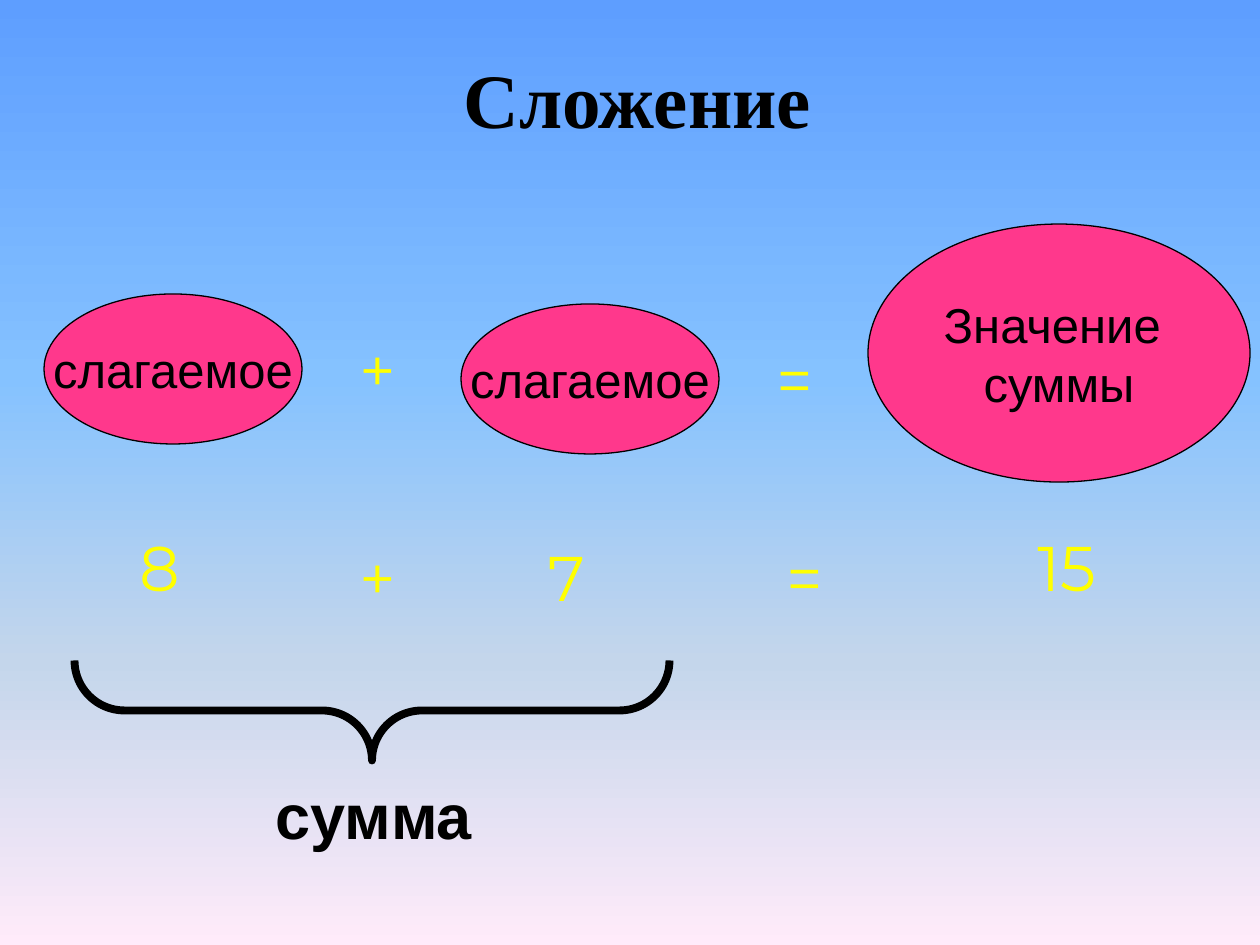
from lxml import etree
from pptx import Presentation
from pptx.dml.color import RGBColor
from pptx.enum.shapes import MSO_SHAPE
from pptx.enum.text import MSO_ANCHOR, PP_ALIGN
from pptx.oxml.ns import qn
from pptx.util import Emu, Pt

OVAL, BRACE = MSO_SHAPE.OVAL, MSO_SHAPE.RIGHT_BRACE
TOP, MIDDLE = MSO_ANCHOR.TOP, MSO_ANCHOR.MIDDLE
LEFT, CENTER = PP_ALIGN.LEFT, PP_ALIGN.CENTER

THEME = {
    "ink": "000000",
    "oval": "FF388C",
    "formula": "FFFF00",
    "sky": [(0, "5E9EFF"), (40, "85C2FF"), (70, "C4D6EB"), (100, "FFEBFA")],
    "title": ("Times New Roman", 44),
    "term": ("Arial", 28),
    "number": ("Montserrat", 36),
    "sum": ("Arial", 36),
}
INK = RGBColor.from_string(THEME["ink"])


def px(*lengths):
    return [Emu(round(length * 914400 / 126)) for length in lengths]


def write(frame, lines, role, color, align, anchor, bold=False, wrap=False):
    frame.word_wrap = wrap
    frame.vertical_anchor = anchor
    runs = []
    for index, line in enumerate(lines):
        paragraph = frame.paragraphs[0] if index == 0 else frame.add_paragraph()
        paragraph.alignment = align
        run = paragraph.add_run()
        run.text = line
        run.font.name, size = THEME[role]
        run.font.size = Pt(size)
        run.font.bold = bold
        run.font.color.rgb = RGBColor.from_string(color)
        runs.append(run)
    return runs


prs = Presentation()
prs.slide_width, prs.slide_height = px(1260, 945)
slide = prs.slides.add_slide(prs.slide_layouts[5])
shapes = slide.shapes

sky = slide.background.fill
sky.gradient()
sky.gradient_angle = 270
stops = slide._element.find(".//" + qn("a:gsLst"))
for stop in list(stops):
    stops.remove(stop)
for position, color in THEME["sky"]:
    stop = etree.SubElement(stops, qn("a:gs"), pos=str(position * 1000))
    etree.SubElement(stop, qn("a:srgbClr"), val=color)

title = shapes.title
title.left, title.top, title.width, title.height = px(451, 45, 375, 105)
write(title.text_frame, ["Сложение"], "title", THEME["ink"], LEFT, TOP, bold=True)

terms = [
    (["слагаемое"], 44, 294, 258, 150),
    (["слагаемое"], 461, 304, 258, 150),
    (["Значение ", "суммы"], 868, 224, 382, 258),
]
for lines, *box in terms:
    term = shapes.add_shape(OVAL, *px(*box))
    term.shadow.inherit = False
    term.fill.solid()
    term.fill.fore_color.rgb = RGBColor.from_string(THEME["oval"])
    term.line.color.rgb = INK
    term.line.width = Pt(0.75)
    write(term.text_frame, lines, "term", THEME["ink"], CENTER, MIDDLE)

formula = [
    ("+", 322, 324, 111, 103),
    ("=", 739, 334, 111, 103),
    ("8", 104, 522, 111, 103),
    ("+", 322, 532, 111, 103),
    ("7", 511, 532, 111, 103),
    ("=", 749, 532, 111, 103),
    ("15", 977, 522, 179, 129),
]
for symbol, *box in formula:
    number = shapes.add_textbox(*px(*box))
    for run in write(number.text_frame, [symbol], "number", THEME["formula"], CENTER, TOP):
        outline = etree.Element(qn("a:ln"), w=str(Pt(0.75)))
        ink_fill = etree.SubElement(outline, qn("a:solidFill"))
        etree.SubElement(ink_fill, qn("a:srgbClr"), val=THEME["ink"])
        run._r.get_or_add_rPr().insert(0, outline)

brace = shapes.add_shape(BRACE, *px(322, 413, 100, 595))
brace.rotation = 90
brace.adjustments[0] = 0.5
brace.adjustments[1] = 0.5
brace.shadow.inherit = False
brace.fill.background()
brace.line.color.rgb = INK
brace.line.width = Pt(4.5)

sum_label = shapes.add_textbox(*px(263, 770, 456, 88))
write(sum_label.text_frame, ["сумма"], "sum", THEME["ink"], LEFT, TOP, bold=True, wrap=True)

prs.save("out.pptx")
